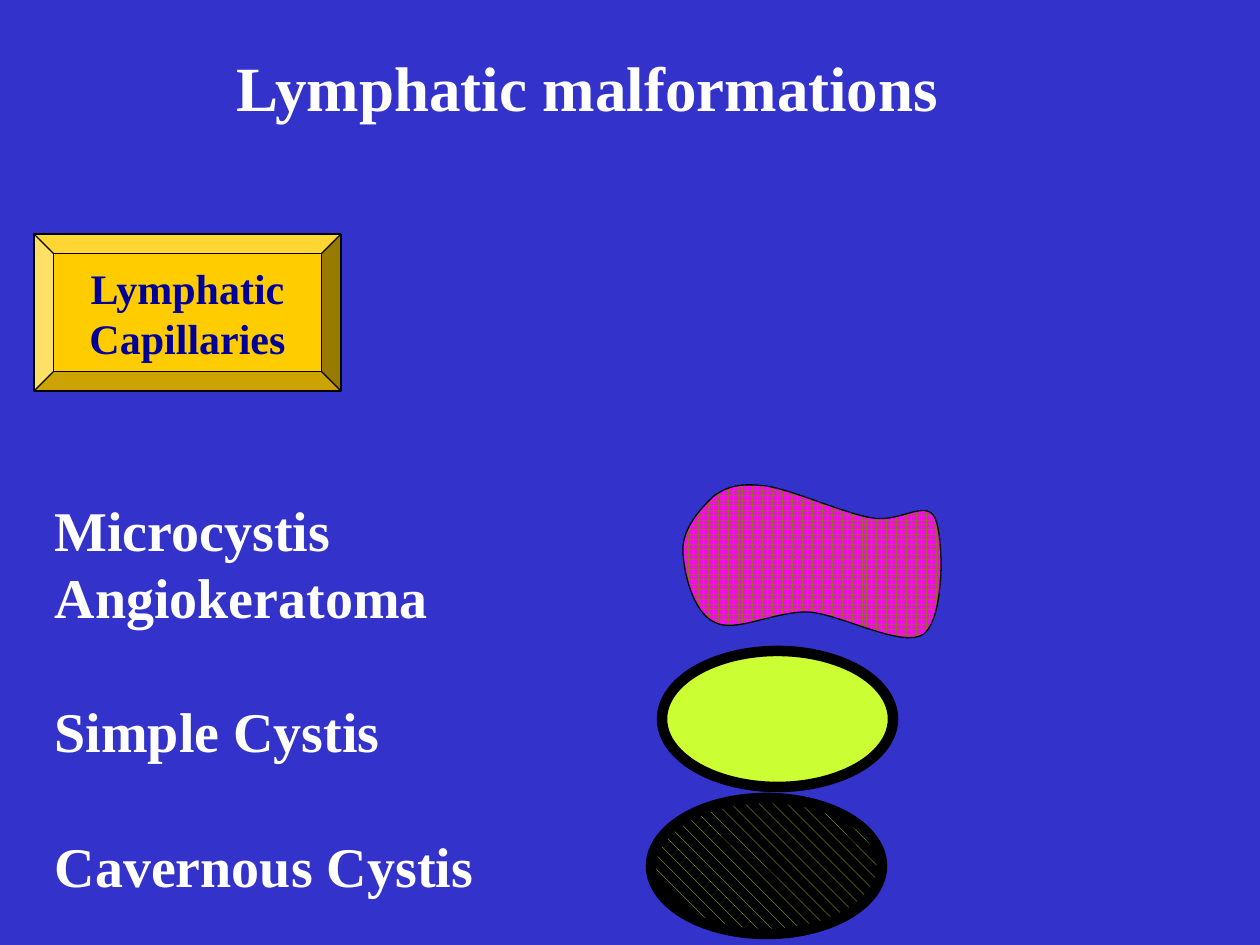
from pptx import Presentation
from pptx.dml.color import RGBColor
from pptx.enum.dml import MSO_PATTERN as PATTERN
from pptx.enum.shapes import MSO_SHAPE as SHAPE
from pptx.enum.text import MSO_ANCHOR as ANCHOR, MSO_AUTO_SIZE as AUTO_SIZE, PP_ALIGN as ALIGN
from pptx.util import Pt
from lxml import etree

EMU_PER_PX = 914400 / 126
CURVE_STEPS = 16


def px(*lengths):
    """Turn pixel lengths into a list of EMU."""
    return [round(length * EMU_PER_PX) for length in lengths]


def color(value):
    return RGBColor.from_string(value)


deck = Presentation()
deck.slide_width, deck.slide_height = px(1260, 945)
page = deck.slides.add_slide(deck.slide_layouts[1])
page.background.fill.solid()
page.background.fill.fore_color.rgb = color("3333CC")

# Title, list of malformations and the button
title, names = page.shapes.title, page.placeholders[1]
button = page.shapes.add_shape(SHAPE.BEVEL, *px(34, 234, 307, 157))
button.adjustments[0] = 0.125
button.fill.solid()
button.fill.fore_color.rgb = color("FFCC00")

texts = [
    (title, (220, 42, 735, 89), "Lymphatic malformations", 36, "FFFFFF", ALIGN.CENTER, ANCHOR.TOP),
    (names, (42, 489, 449, 420), "Microcystis\nAngiokeratoma\nSimple Cystis\nCavernous Cystis",
     32, "FFFFFF", ALIGN.LEFT, ANCHOR.TOP),
    (button, (34, 234, 307, 157), "Lymphatic\nCapillaries", 24, "000099", ALIGN.CENTER, ANCHOR.MIDDLE),
]
for box, place, words, size, ink, align, anchor in texts:
    box.left, box.top, box.width, box.height = px(*place)
    frame = box.text_frame
    frame.text = words
    frame.word_wrap = False
    frame.auto_size = AUTO_SIZE.NONE
    frame.vertical_anchor = anchor
    for para in frame.paragraphs:
        para.alignment = align
        para.line_spacing = Pt(size * 1.2)
        para.space_before = Pt(0)
        for span in para.runs:
            span.font.name = "Times New Roman"
            span.font.size = Pt(size)
            span.font.bold = True
            span.font.color.rgb = color(ink)

for para in names.text_frame.paragraphs:
    properties = para._p.get_or_add_pPr()
    properties.set("marL", "0")
    properties.set("indent", "0")
    etree.SubElement(properties, "{http://schemas.openxmlformats.org/drawingml/2006/main}buNone")
for para in names.text_frame.paragraphs[2:]:
    para.space_before = Pt(32 * 1.2)

# Microcystic blob: a closed chain of Bezier curves
blob_start = (714, 496)
blob_curves = [
    ((728, 486), (741, 483), (766, 486)),
    ((793, 490), (843, 513), (872, 518)),
    ((900, 523), (926, 499), (935, 518)),
    ((944, 537), (945, 617), (924, 634)),
    ((903, 649), (843, 615), (809, 612)),
    ((774, 611), (735, 634), (714, 622)),
    ((693, 612), (683, 571), (683, 549)),
    ((683, 528), (701, 508), blob_start),
]
outline = []
start = blob_start
for first, second, end in blob_curves:
    for step in range(1, CURVE_STEPS + 1):
        t = step / CURVE_STEPS
        u = 1 - t
        outline.append(px(*(
            u**3 * a + 3 * u * u * t * b + 3 * u * t * t * c + t**3 * d
            for a, b, c, d in zip(start, first, second, end)
        )))
    start = end
builder = page.shapes.build_freeform(*px(*blob_start), scale=1.0)
builder.add_line_segments(outline, close=True)
blob = builder.convert_to_shape()

# Cysts
simple_cyst = page.shapes.add_shape(SHAPE.OVAL, *px(662, 651, 231, 136))
simple_cyst.fill.solid()
simple_cyst.fill.fore_color.rgb = color("CCFF33")
cavernous_cyst = page.shapes.add_shape(SHAPE.OVAL, *px(651, 798, 231, 136))

for shape, pattern, front, back in [
    (blob, PATTERN.SPHERE, "996633", "FF00FF"),
    (cavernous_cyst, PATTERN.SHINGLE, "CCFF33", "000000"),
]:
    shape.fill.patterned()
    shape.fill.pattern = pattern
    shape.fill.fore_color.rgb = color(front)
    shape.fill.back_color.rgb = color(back)

for shape, width in [(button, 0.75), (blob, 0.75), (simple_cyst, 6), (cavernous_cyst, 6)]:
    shape.shadow.inherit = False
    shape.line.color.rgb = color("000000")
    shape.line.width = Pt(width)

deck.save("out.pptx")
